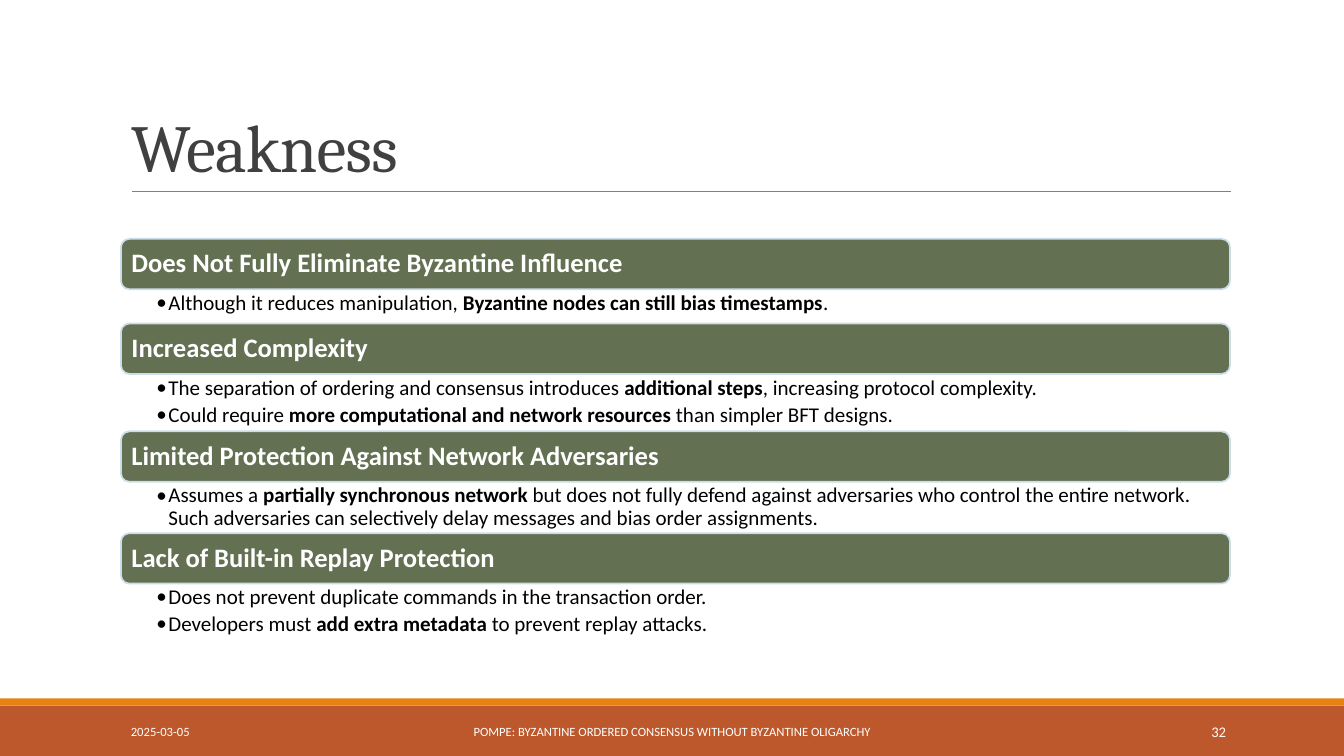
from pptx import Presentation
from pptx.dml.color import RGBColor
from pptx.enum.shapes import MSO_CONNECTOR, MSO_SHAPE
from pptx.enum.text import MSO_ANCHOR, MSO_AUTO_SIZE, PP_ALIGN
from pptx.oxml.ns import qn
from pptx.util import Inches, Pt
from lxml.etree import SubElement

COLORS = {
    "rust": "BD582C", "orange": "E48312", "green": "637052", "edge": "CCDDEA",
    "rule": "808080", "title": "404040", "white": "FFFFFF", "black": "000000",
}
TOPICS = [
    ("Does Not Fully Eliminate Byzantine Influence", 0.34, [
        "Although it reduces manipulation, *Byzantine nodes can still bias timestamps*."]),
    ("Increased Complexity", 0.57, [
        "The separation of ordering and consensus introduces *additional steps*, "
        "increasing protocol complexity.",
        "Could require *more computational and network resources* than simpler BFT designs."]),
    ("Limited Protection Against Network Adversaries", 0.51, [
        "Assumes a *partially synchronous network* but does not fully defend against "
        "adversaries who control the entire network. Such adversaries can selectively "
        "delay messages and bias order assignments."]),
    ("Lack of Built-in Replay Protection", 0.57, [
        "Does not prevent duplicate commands in the transaction order.",
        "Developers must *add extra metadata* to prevent replay attacks."]),
]
FOOTER = [
    ("2025-03-05", 1.2, 2.7, 9, PP_ALIGN.LEFT),
    ("POMPE: BYZANTINE ORDERED CONSENSUS WITHOUT BYZANTINE OLIGARCHY",
     4.03, 5.27, 9, PP_ALIGN.CENTER),
    ("32", 10.83, 1.43, 10.5, PP_ALIGN.RIGHT),
]


class Deck:
    left, width, bar = 1.2, 11, 0.5

    def __init__(self):
        self.prs = Presentation()
        self.prs.slide_width = Inches(13.33)
        self.prs.slide_height = Inches(7.5)
        self.slide = self.prs.slides.add_slide(self.prs.slide_layouts[4])
        self.shapes = self.slide.shapes
        self.bodies = [p for p in self.slide.placeholders if p != self.shapes.title]

    def color(self, name):
        return RGBColor.from_string(COLORS[name])

    def place(self, item, x, y, w, h):
        item.left, item.top = Inches(x), Inches(y)
        item.width, item.height = Inches(w), Inches(h)

    def frame(self, item, anchor, sides=(0.1, 0.05, 0.1, 0.05)):
        frame = item.text_frame
        frame.word_wrap = True
        frame.auto_size = MSO_AUTO_SIZE.NONE
        frame.vertical_anchor = anchor
        (frame.margin_left, frame.margin_top,
         frame.margin_right, frame.margin_bottom) = map(Inches, sides)
        return frame

    def style(self, para, size, color, align=PP_ALIGN.LEFT, space=1.0, bold=False, face="Calibri"):
        para.alignment = align
        para.line_spacing = space
        para.space_before = Pt(0)
        for run in para.runs:
            run.font.name = face
            run.font.size = Pt(size)
            run.font.bold = bold
            run.font.color.rgb = self.color(color)

    def shape(self, kind, x, y, w, h, fill, edge=None):
        item = self.shapes.add_shape(kind, Inches(x), Inches(y), Inches(w), Inches(h))
        item.shadow.inherit = False
        item.fill.solid()
        item.fill.fore_color.rgb = self.color(fill)
        if edge:
            item.line.color.rgb = self.color(edge)
            item.line.width = Pt(1.25)
        else:
            item.line.fill.background()
        return item

    def rule(self, x, y, end):
        line = self.shapes.add_connector(
            MSO_CONNECTOR.STRAIGHT, Inches(x), Inches(y), Inches(end), Inches(y))
        line.line.color.rgb = self.color("rule")
        line.line.width = Pt(0.5)
        SubElement(line._element.spPr, qn("a:effectLst"))

    def title(self, text):
        item = self.shapes.title
        self.place(item, self.left, 0.31, self.width, 1.59)
        frame = self.frame(item, MSO_ANCHOR.BOTTOM)
        frame.text = text
        para = frame.paragraphs[0]
        self.style(para, 48, "title", space=0.85, face="Cambria")
        para.runs[0].font._element.set("spc", "-50")

    def header(self, text, y):
        item = self.shape(MSO_SHAPE.ROUNDED_RECTANGLE, self.left, y,
                          self.width, self.bar, "green", "edge")
        frame = self.frame(item, MSO_ANCHOR.MIDDLE, (0.08,) * 4)
        frame.text = text
        self.style(frame.paragraphs[0], 19, "white", space=0.9, bold=True)

    def points(self, item, lines, y, h):
        self.place(item, self.left, y, self.width, h)
        frame = self.frame(item, MSO_ANCHOR.TOP, (0.35, 0.03, 0.15, 0.03))
        for i, line in enumerate(lines):
            para = frame.add_paragraph() if i else frame.paragraphs[0]
            parts = line.split("*")
            for part in parts:
                para.add_run().text = part
            self.style(para, 15, "black", space=0.9)
            for run in para.runs[1::2]:
                run.font.bold = True
            para.space_after = Pt(3)
            props = para._p.get_or_add_pPr()
            props.set("marL", str(Inches(0.12)))
            props.set("indent", str(Inches(-0.12)))
            SubElement(props, qn("a:buFont"), typeface="Calibri")
            SubElement(props, qn("a:buChar"), char="•")

    def note(self, text, x, w, size, align):
        item = self.shapes.add_textbox(Inches(x), Inches(7.06), Inches(w), Inches(0.4))
        frame = self.frame(item, MSO_ANCHOR.MIDDLE)
        frame.text = text
        self.style(frame.paragraphs[0], size, "white", align)


def main():
    deck = Deck()
    deck.shape(MSO_SHAPE.RECTANGLE, 0, 7, 13.33, 0.5, "rust")
    deck.shape(MSO_SHAPE.RECTANGLE, 0, 6.93, 13.33, 0.07, "orange")
    deck.rule(1.31, 1.9, 12.21)
    deck.title("Weakness")
    y = 2.37
    for body, (head, height, lines) in zip(deck.bodies, TOPICS):
        deck.header(head, y)
        deck.points(body, lines, y + deck.bar, height)
        y += deck.bar + height
    for entry in FOOTER:
        deck.note(*entry)
    deck.prs.save("out.pptx")


if __name__ == "__main__":
    main()
